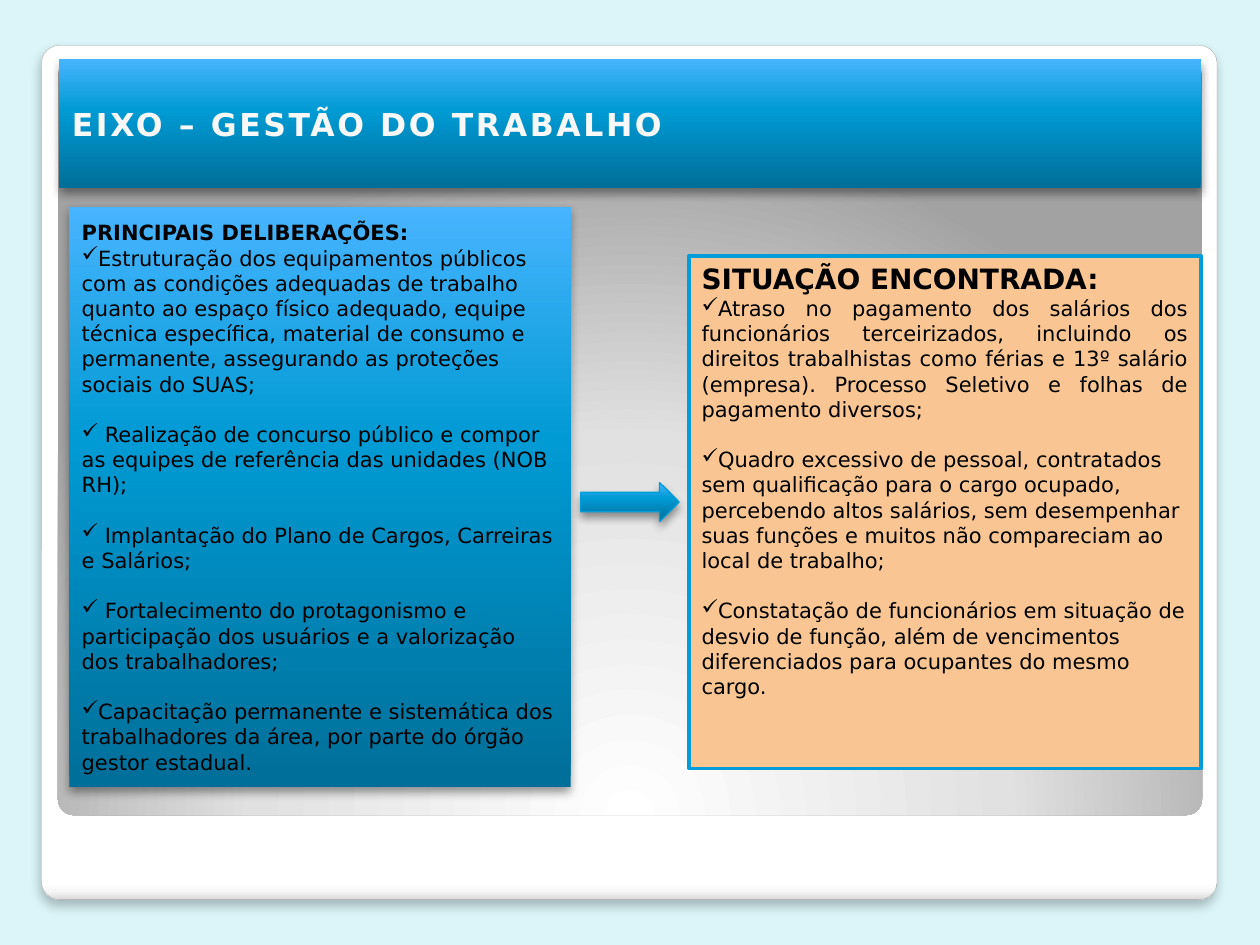
from lxml import etree
from pptx import Presentation
from pptx.dml.color import RGBColor
from pptx.enum.shapes import MSO_SHAPE as SHAPE
from pptx.enum.text import MSO_ANCHOR as ANCHOR, MSO_AUTO_SIZE as AUTO, PP_ALIGN as ALIGN
from pptx.oxml.ns import qn
from pptx.util import Inches, Pt

BACKDROP = RGBColor(0xDB, 0xF5, 0xF9)
WHITE = RGBColor(0xFF, 0xFF, 0xFF)
OFF_WHITE = RGBColor(0xF8, 0xF8, 0xF8)
PALE = RGBColor(0xF7, 0xF7, 0xF7)
LIGHT = RGBColor(0xE1, 0xE1, 0xE1)
SILVER = RGBColor(0xDA, 0xDA, 0xDA)
GREY = RGBColor(0xA2, 0xA2, 0xA2)
EDGE = RGBColor(0xA4, 0xA4, 0xA4)
BLACK = RGBColor(0, 0, 0)
DEEP = RGBColor(0x00, 0x6F, 0x99)
BLUE = RGBColor(0x00, 0x9A, 0xD4)
SKY = RGBColor(0x48, 0xB4, 0xFF)
ACCENT = RGBColor(0x00, 0x9D, 0xD9)
PEACH = RGBColor(0xF9, 0xC6, 0x93)

FONT = "DejaVu Sans"
CARD_STOPS = [(0, WHITE), (98, WHITE), (99, PALE), (100, SILVER)]
PANEL_STOPS = [(0, WHITE), (55, LIGHT), (100, GREY)]
BLUE_STOPS = [(0, DEEP), (60, BLUE), (100, SKY)]
CARD_SHADOW = (25, 6, 4)
BLUE_SHADOW = (40, 5.2, 3)

DELIBERATIONS = [
    "Estruturação dos equipamentos públicos com as condições adequadas de trabalho quanto ao "
    "espaço físico adequado, equipe técnica específica, material de consumo e permanente, "
    "assegurando as proteções sociais do SUAS;",
    " Realização de concurso público e compor as equipes de referência das unidades (NOB RH);",
    " Implantação do Plano de Cargos, Carreiras e Salários;",
    " Fortalecimento do protagonismo e participação dos usuários e a valorização dos "
    "trabalhadores;",
    "Capacitação permanente e sistemática dos trabalhadores da área, por parte do órgão gestor "
    "estadual.",
]
FINDINGS = [
    "Atraso no pagamento dos salários dos funcionários terceirizados, incluindo os direitos "
    "trabalhistas como férias e 13º salário (empresa). Processo Seletivo e folhas de pagamento "
    "diversos;",
    "Quadro excessivo de pessoal, contratados sem qualificação para o cargo ocupado, percebendo "
    "altos salários, sem desempenhar suas funções e muitos não compareciam ao local de trabalho;",
    "Constatação de funcionários em situação de desvio de função, além de vencimentos "
    "diferenciados para ocupantes do mesmo cargo.",
]


def child(parent, tag, **attrs):
    return etree.SubElement(parent, qn(tag), {k: str(v) for k, v in attrs.items()})


def write(p, text, size=12, color=BLACK, bold=False, align=ALIGN.LEFT, before=0,
          bullet=None, spacing=None):
    p.alignment = align
    p.space_before = Pt(before)
    if bullet:
        child(p._p.get_or_add_pPr(), "a:buChar", char=bullet)
    r = p.add_run()
    r.text = text
    r.font.name, r.font.size, r.font.bold = FONT, Pt(size), bold
    r.font.color.rgb = color
    if spacing:
        r._r.get_or_add_rPr().set("spc", str(int(spacing * 100)))


class SlideBuilder:
    """Holds the style and the current slide."""

    def __init__(self, prs):
        self.s = prs.slides.add_slide(prs.slide_layouts[5])
        self.s.background.fill.solid()
        self.s.background.fill.fore_color.rgb = BACKDROP

    def gradient(self, sp, stops, angle=None):
        sp.fill.solid()
        solid = sp.element.spPr.find(qn("a:solidFill"))
        grad = etree.Element(qn("a:gradFill"), rotWithShape="1")
        gs_list = child(grad, "a:gsLst")
        for pos, color in stops:
            gs = child(gs_list, "a:gs", pos=pos * 1000)
            child(gs, "a:srgbClr", val=color)
        if angle is None:
            path = child(grad, "a:path", path="circle")
            child(path, "a:fillToRect", l=50000, t=175000, r=50000, b=-75000)
        else:
            child(grad, "a:lin", ang=angle * 60000, scaled=0)
        solid.getparent().replace(solid, grad)

    def style(self, sp, fill, angle=None, line=None, shadow=None):
        if isinstance(fill, list):
            self.gradient(sp, fill, angle)
        else:
            sp.fill.solid()
            sp.fill.fore_color.rgb = fill
        if line:
            sp.line.color.rgb, sp.line.width = line[0], Pt(line[1])
        else:
            sp.line.fill.background()
        sp.shadow.inherit = False
        if shadow:
            alpha, blur, dist = shadow
            outer = child(sp.element.spPr.find(qn("a:effectLst")), "a:outerShdw",
                          blurRad=Pt(blur), dist=Pt(dist), dir=5400000, rotWithShape=0)
            color = child(outer, "a:srgbClr", val=BLACK)
            child(color, "a:alpha", val=alpha * 1000)

    def shape(self, kind, x, y, w, h, fill, adjust=None, **style):
        sp = self.s.shapes.add_shape(kind, Inches(x), Inches(y), Inches(w), Inches(h))
        if adjust:
            sp.adjustments[0] = adjust
        self.style(sp, fill, **style)
        return sp

    def title(self, text, x, y, w, h):
        sp = self.s.shapes.title
        sp.left, sp.top, sp.width, sp.height = Inches(x), Inches(y), Inches(w), Inches(h)
        self.style(sp, BLUE_STOPS, 270, shadow=BLUE_SHADOW)
        tf = sp.text_frame
        tf.auto_size, tf.vertical_anchor = AUTO.NONE, ANCHOR.MIDDLE
        write(tf.paragraphs[0], text, 18, OFF_WHITE, True, ALIGN.JUSTIFY, spacing=1.5)
        self.s.shapes.element.append(sp.element)

    def text_panel(self, box, heading, items, fill, size=12, align=ALIGN.LEFT,
                   anchor=ANCHOR.TOP, **style):
        tf = self.shape(SHAPE.RECTANGLE, *box, fill, **style).text_frame
        tf.word_wrap, tf.vertical_anchor = True, anchor
        write(tf.paragraphs[0], heading, size, bold=True, align=align)
        for i, item in enumerate(items):
            write(tf.add_paragraph(), item, bullet="✓", before=14.4 if i else 0,
                  align=ALIGN.LEFT if i else align)


def main():
    prs = Presentation()
    prs.slide_width, prs.slide_height = Inches(10), Inches(7.5)
    b = SlideBuilder(prs)
    b.shape(SHAPE.ROUNDED_RECTANGLE, 0.33, 0.36, 9.33, 6.78, CARD_STOPS, 0.021,
            angle=90, line=(EDGE, 0.16), shadow=CARD_SHADOW)
    b.shape(SHAPE.ROUNDED_RECTANGLE, 0.46, 0.47, 9.08, 6, PANEL_STOPS, 0.021)
    b.title("EIXO – GESTÃO DO TRABALHO", 0.47, 0.47, 9.06, 1.02)
    b.text_panel((5.47, 2.03, 4.06, 4.07), "SITUAÇÃO ENCONTRADA:", FINDINGS, PEACH,
                 size=16, align=ALIGN.JUSTIFY, line=(ACCENT, 2.25))
    b.text_panel((0.55, 1.64, 3.98, 4.61), "PRINCIPAIS DELIBERAÇÕES:", DELIBERATIONS,
                 BLUE_STOPS, anchor=ANCHOR.MIDDLE, angle=270, shadow=BLUE_SHADOW)
    b.shape(SHAPE.RIGHT_ARROW, 4.61, 3.83, 0.78, 0.31, BLUE_STOPS,
            angle=270, line=(ACCENT, 0.75), shadow=BLUE_SHADOW)
    prs.save("out.pptx")


if __name__ == "__main__":
    main()
